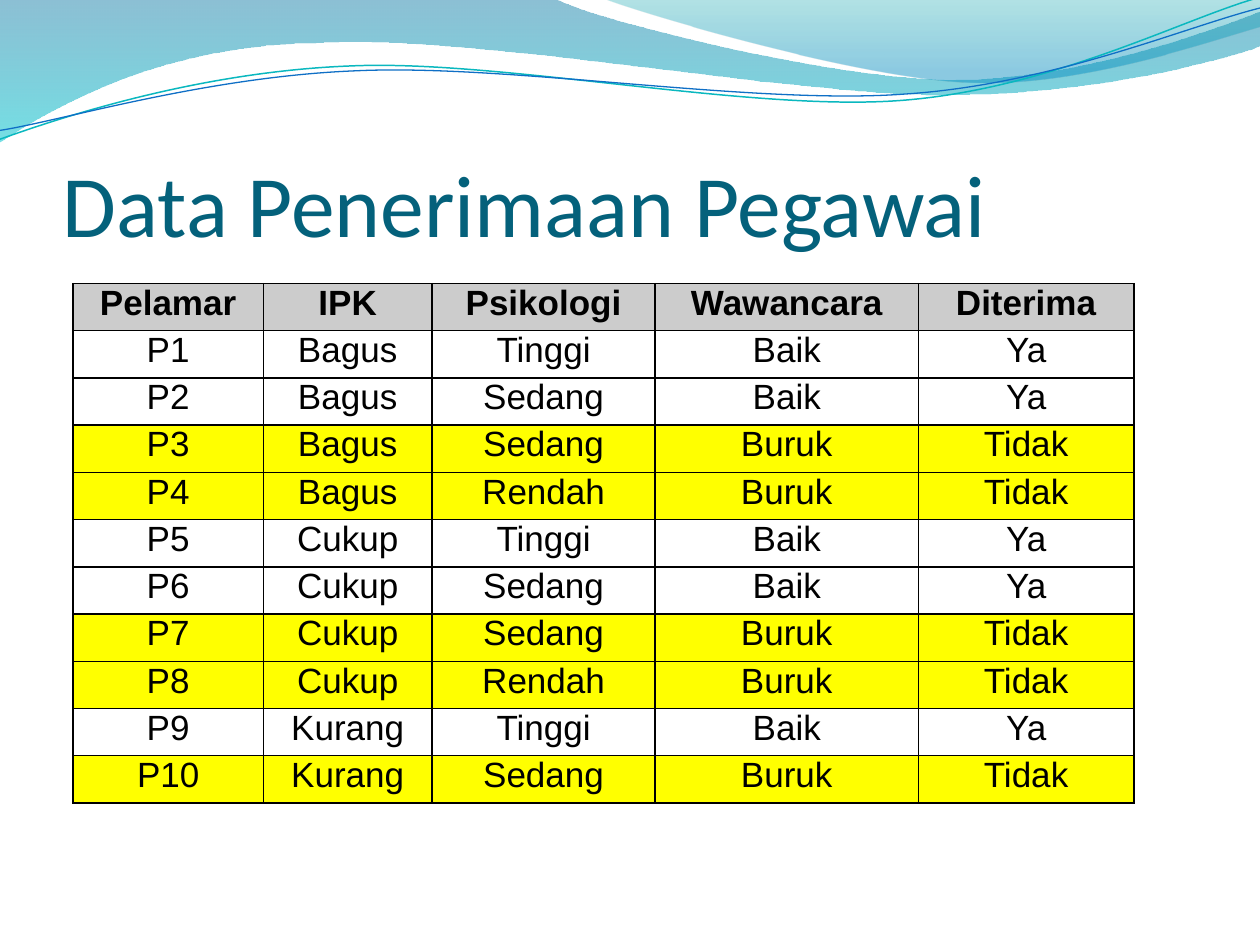
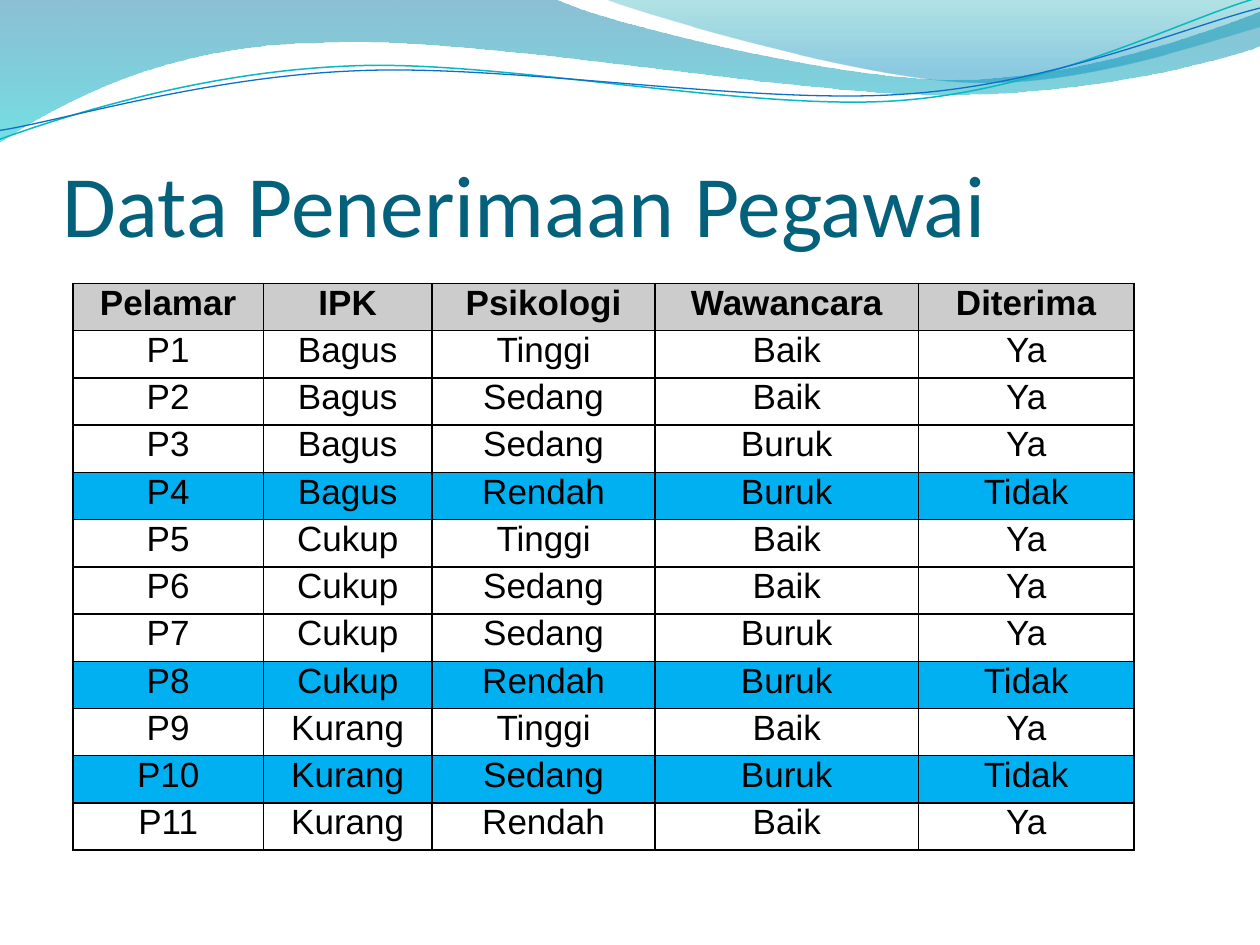
import pptx
import pptx.util
import pptx.dml.color
import pptx.enum.text
import pptx.oxml.ns
import lxml.etree

Inches = pptx.util.Inches
Pt = pptx.util.Pt
qn = pptx.oxml.ns.qn
RGB = pptx.dml.color.RGBColor.from_string
ALIGN = pptx.enum.text.PP_ALIGN
ANCHOR = pptx.enum.text.MSO_ANCHOR

THEME = {
    "title": "04617B", "text": "000000", "border": "000000",
    "header": "CCCCCC", "yellow": "FFFF00", "blue": "00B0F0",
    "title_font": "Calibri", "table_font": "Arial",
    "title_size": 50, "table_size": 20, "border_width": 1,
}

# Wave outlines in inches: a start, then line ends (1 point) or Bezier curves (3 points).
# Gradient stops are position, colour and opacity; lines are colour and width.
WAVES = [
    {"start": (0, -0.01),
     "steps": [[(4.4, -0.01)],
               [(4.76, 0.17), (6.64, 0.63), (7.58, 0.63)],
               [(8.53, 0.63), (9.58, 0.26), (10, 0.09)],
               [(10.01, 0.36)],
               [(9.83, 0.44), (8.7, 0.76), (7.46, 0.75)],
               [(6.22, 0.75), (3.82, 0.28), (2.57, 0.34)],
               [(1.29, 0.35), (0.46, 0.83), (-0.01, 1.13)],
               [(0, -0.01)]],
     "gradient": [(0, "0074A1", 45), (1, "00C6CF", 55)]},
    {"start": (4.79, -0.01),
     "steps": [[(5.09, 0.11), (6.82, 0.62), (7.69, 0.65)],
               [(8.56, 0.69), (9.61, 0.32), (10, 0.21)],
               [(10, 0)],
               [(4.79, -0.01)]],
     "gradient": [(0, "00A1A9", 30), (0.8, "008BBF", 45)]},
    {"start": (-0.02, 0.87),
     "steps": [[(0.47, 0.72), (1.58, 0.41), (2.78, 0.42)],
               [(3.96, 0.42), (5.91, 0.93), (7.12, 0.9)],
               [(8.32, 0.87), (9.4, 0.36), (10, 0.22)]],
     "line": ("0AB8BF", 0.85)},
    {"start": (-0.02, 0.8),
     "steps": [[(0.46, 0.75), (1.64, 0.45), (2.83, 0.46)],
               [(4.03, 0.46), (5.96, 0.88), (7.16, 0.85)],
               [(8.35, 0.83), (9.42, 0.42), (10.02, 0.3)]],
     "line": ("0F6FC6", 0.75)},
]
LINE_ROTATION = 357.3

HEADINGS = ["Pelamar", "IPK", "Psikologi", "Wawancara", "Diterima"]
COLUMN_WIDTHS = [1.51, 1.34, 1.77, 2.09, 1.71]
ROW_HEIGHT = Inches(4.5) // 12
APPLICANTS = [
    ("P1", "Bagus", "Tinggi", "Baik"),
    ("P2", "Bagus", "Sedang", "Baik"),
    ("P3", "Bagus", "Sedang", "Buruk"),
    ("P4", "Bagus", "Rendah", "Buruk"),
    ("P5", "Cukup", "Tinggi", "Baik"),
    ("P6", "Cukup", "Sedang", "Baik"),
    ("P7", "Cukup", "Sedang", "Buruk"),
    ("P8", "Cukup", "Rendah", "Buruk"),
    ("P9", "Kurang", "Tinggi", "Baik"),
    ("P10", "Kurang", "Sedang", "Buruk"),
    ("P11", "Kurang", "Rendah", "Baik"),
]
PAGES = [
    {"count": 10, "rejected": {"P3", "P4", "P7", "P8", "P10"}, "highlight": "yellow"},
    {"count": 11, "rejected": {"P4", "P8", "P10"}, "highlight": "blue"},
]


def write_text(frame, text, *, font, size, color, bold=False, align=ALIGN.LEFT):
    para = frame.paragraphs[0]
    para.alignment = align
    span = para.add_run()
    span.text = text
    span.font.name = font
    span.font.size = Pt(size)
    span.font.bold = bold
    span.font.color.rgb = RGB(color)


def add_curved_outline(shapes, start, steps, close):
    """Build a freeform through all points, then turn each group of three into a curve."""
    builder = shapes.build_freeform(Inches(start[0]), Inches(start[1]))
    points = [(Inches(x), Inches(y)) for step in steps for x, y in step]
    builder.add_line_segments(points, close=close)
    shape = builder.convert_to_shape()
    segments = iter(list(shape.element.iter(qn("a:lnTo"))))
    for step in steps:
        group = [next(segments) for _ in step]
        if len(group) == 3:
            curve = lxml.etree.Element(qn("a:cubicBezTo"))
            group[0].addprevious(curve)
            for segment in group:
                curve.append(segment[0])
                segment.getparent().remove(segment)
    return shape


deck = pptx.Presentation()
deck.slide_width, deck.slide_height = Inches(10), Inches(7.5)
pages = [deck.slides.add_slide(deck.slide_layouts[6]) for _ in PAGES]

# Waves along the top, drawn once and moved to the slide master
for number, wave in enumerate(WAVES):
    is_band = "gradient" in wave
    shape = add_curved_outline(pages[0].shapes, wave["start"], wave["steps"], is_band)
    shape.shadow.inherit = False
    if is_band:
        shape.line.fill.background()
        shape.fill.gradient()
        shape.fill.gradient_angle = 270
        for stop, (position, color, _) in zip(shape.fill.gradient_stops, wave["gradient"]):
            stop.position = position
            stop.color.rgb = RGB(color)
        colors = shape.element.iter(qn("a:srgbClr"))
        for node, (_, _, opacity) in zip(colors, wave["gradient"]):
            lxml.etree.SubElement(node, qn("a:alpha"), val=str(opacity * 1000))
    else:
        color, width = wave["line"]
        shape.fill.background()
        shape.line.color.rgb = RGB(color)
        shape.line.width = Pt(width)
        shape.rotation = LINE_ROTATION
    shape.element.nvSpPr.cNvPr.set("id", str(20 + number))
    deck.slide_master.shapes.element.append(shape.element)

for page, content in zip(pages, PAGES):
    # Title
    box = page.shapes.add_textbox(Inches(0.5), Inches(0.77), Inches(9), Inches(1.25))
    frame = box.text_frame
    frame.word_wrap = True
    frame.vertical_anchor = ANCHOR.BOTTOM
    frame.margin_left = frame.margin_right = frame.margin_bottom = 0
    frame.margin_top = Inches(0.05)
    write_text(frame, "Data Penerimaan Pegawai", font=THEME["title_font"],
               size=THEME["title_size"], color=THEME["title"])

    # Applicant table
    rows = [HEADINGS]
    for applicant in APPLICANTS[:content["count"]]:
        rows.append([*applicant, "Tidak" if applicant[0] in content["rejected"] else "Ya"])
    table = page.shapes.add_table(
        len(rows), len(HEADINGS), Inches(0.58), Inches(2.25),
        Inches(sum(COLUMN_WIDTHS)), ROW_HEIGHT * len(rows)).table
    table.first_row = table.horz_banding = False
    for column, width in zip(table.columns, COLUMN_WIDTHS):
        column.width = Inches(width)

    for row_index, values in enumerate(rows):
        table.rows[row_index].height = ROW_HEIGHT
        is_header = row_index == 0
        for column_index, value in enumerate(values):
            cell = table.cell(row_index, column_index)
            cell.margin_left = cell.margin_right = Inches(0.07)
            cell.margin_top = cell.margin_bottom = 0
            write_text(cell.text_frame, value, font=THEME["table_font"],
                       size=THEME["table_size"], color=THEME["text"],
                       bold=is_header, align=ALIGN.CENTER)

            # Borders come before the fill in the cell properties
            properties = cell._tc.get_or_add_tcPr()
            for side in ("a:lnL", "a:lnR", "a:lnT", "a:lnB"):
                edge = lxml.etree.SubElement(properties, qn(side),
                                             w=str(Pt(THEME["border_width"])))
                solid = lxml.etree.SubElement(edge, qn("a:solidFill"))
                lxml.etree.SubElement(solid, qn("a:srgbClr"), val=THEME["border"])

            if is_header or values[-1] == "Tidak":
                cell.fill.solid()
                cell.fill.fore_color.rgb = RGB(
                    THEME["header" if is_header else content["highlight"]])
            else:
                cell.fill.background()

deck.save("out.pptx")
